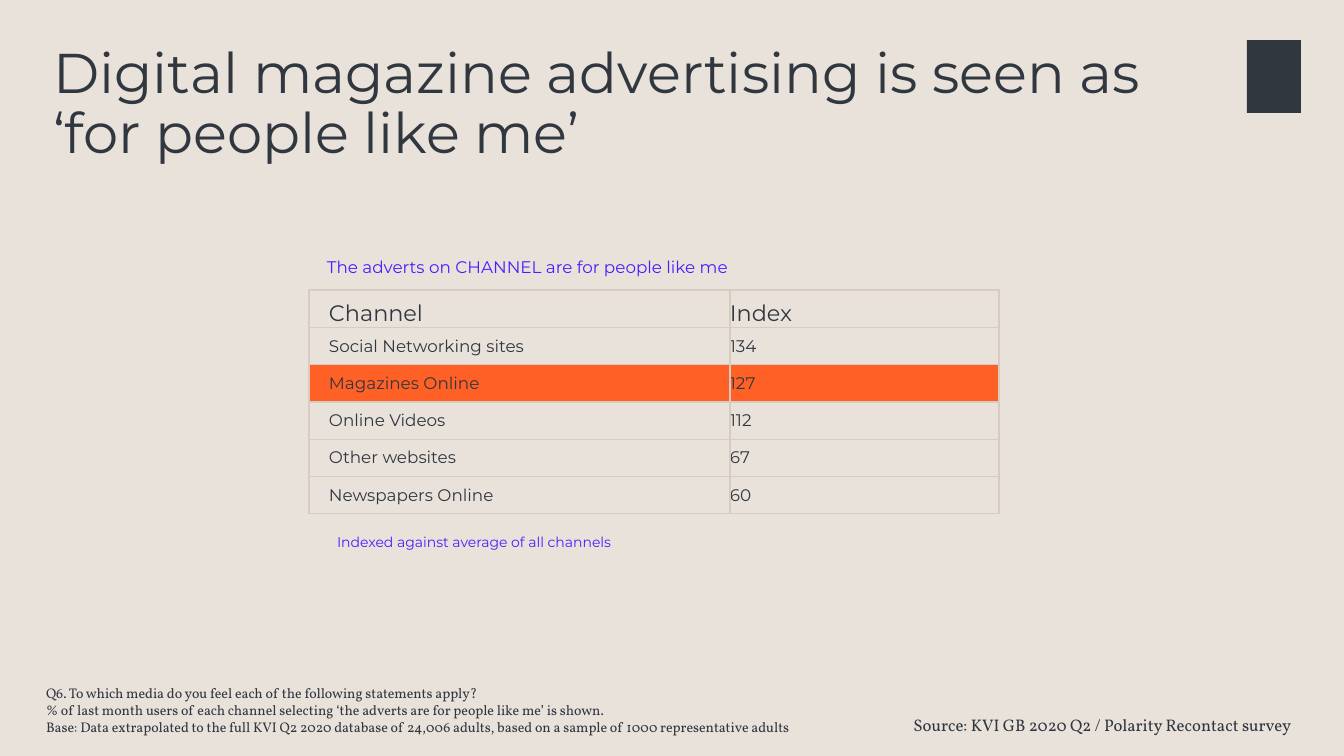
"""Build the slide on how digital magazine advertising is perceived."""
import pptx
import pptx.dml.color
import pptx.enum.shapes
import pptx.enum.text
import pptx.oxml
import pptx.oxml.ns
import pptx.util

RGBColor = pptx.dml.color.RGBColor
Anchor = pptx.enum.text.MSO_ANCHOR
Align = pptx.enum.text.PP_ALIGN
SAND = RGBColor(0xE9, 0xE2, 0xDB)
SLATE = RGBColor(0x30, 0x37, 0x3F)
ORANGE = RGBColor(0xFF, 0x60, 0x25)
VIOLET = RGBColor(0x49, 0x1D, 0xFF)
RULE = RGBColor(0xD8, 0xCB, 0xBF)
SANS, SERIF = "Montserrat", "Vollkorn"
PX = 914400 / 100.8


def px(length):
    return pptx.util.Emu(round(length * PX))


def write(frame, lines, size, font, color, anchor, insets, align=Align.LEFT, spacing=1.0, before=0):
    frame.vertical_anchor = anchor
    frame.margin_left, frame.margin_top, frame.margin_right, frame.margin_bottom = map(px, insets)
    for number, line in enumerate(lines):
        paragraph = frame.add_paragraph() if number else frame.paragraphs[0]
        paragraph.alignment = align
        paragraph.line_spacing = spacing
        paragraph.space_before = pptx.util.Pt(before)
        run = paragraph.add_run()
        run.text = line
        run.font.size = pptx.util.Pt(size)
        run.font.name = font
        run.font.color.rgb = color


deck = pptx.Presentation()
deck.slide_width, deck.slide_height = px(1344), px(756)
slide = deck.slides.add_slide(deck.slide_layouts[6])
slide.background.fill.solid()
slide.background.fill.fore_color.rgb = SAND

emblem = slide.shapes.add_shape(
    pptx.enum.shapes.MSO_SHAPE.RECTANGLE, px(1247), px(40), px(54), px(73))
emblem.shadow.inherit = False
emblem.fill.solid()
emblem.fill.fore_color.rgb = SLATE
emblem.line.fill.background()

title = slide.shapes.add_textbox(px(43), px(40), px(1121), px(146)).text_frame
title.word_wrap = True
write(title, ["Digital magazine advertising is seen as ‘for people like me’"],
      40, SANS, SLATE, Anchor.TOP, (10, 5, 10, 5), spacing=0.9)

source = slide.shapes.add_textbox(px(851), px(706), px(451), px(41)).text_frame
source.word_wrap = True
write(source, ["Source: KVI GB 2020 Q2 / Polarity Recontact survey"],
      12, SERIF, SLATE, Anchor.MIDDLE, (10, 5, 10, 5), Align.RIGHT, 0.9, 10)

channel_scores = [
    ("Channel", "Index"),
    ("Social Networking sites", "134"),
    ("Magazines Online", "127"),
    ("Online Videos", "112"),
    ("Other websites", "67"),
    ("Newspapers Online", "60"),
]
scores = slide.shapes.add_table(
    len(channel_scores), 2, px(309), px(290), px(690), px(224)).table
scores.first_row = False
scores.horz_banding = False
scores.columns[0].width, scores.columns[1].width = px(421), px(269)
for row, entry in enumerate(channel_scores):
    scores.rows[row].height = px(224 / len(channel_scores))
    for column, text in enumerate(entry):
        cell = scores.cell(row, column)
        if entry[0] == "Magazines Online":
            cell.fill.solid()
            cell.fill.fore_color.rgb = ORANGE
        else:
            cell.fill.background()
        write(cell.text_frame, [text], 12 if row else 16, SANS, SLATE, Anchor.MIDDLE, (0, 0, 0, 0))
        cell.vertical_anchor = Anchor.MIDDLE if row else Anchor.BOTTOM
        cell.margin_left = px(0 if column else 20)
        cell.margin_top = cell.margin_right = cell.margin_bottom = 0
        properties = cell._tc.get_or_add_tcPr()
        for order, side in enumerate("LRTB"):
            properties.insert(order, pptx.oxml.parse_xml(
                f'<a:ln{side} {pptx.oxml.ns.nsdecls("a")} w="12700"><a:solidFill>'
                f'<a:srgbClr val="{RULE}"/></a:solidFill></a:ln{side}>'))

footnote = slide.shapes.add_textbox(px(43), px(651), px(807), px(87)).text_frame
footnote.word_wrap = True
write(footnote, [
    "Q6. To which media do you feel each of the following statements apply?",
    "% of last month users of each channel selecting ‘the adverts are for people like me’ is shown.",
    "Base: Data extrapolated to the full KVI Q2 2020 database of 24,006 adults, "
    "based on a sample of 1000 representative adults",
], 10, SERIF, SLATE, Anchor.BOTTOM, (3, 3, 3, 3))

index_note = slide.shapes.add_textbox(px(327), px(531), px(294), px(22)).text_frame
index_note.word_wrap = False
write(index_note, ["Indexed against average of all channels"],
      10, SANS, VIOLET, Anchor.MIDDLE, (3, 3, 3, 3), Align.CENTER)

statement = slide.shapes.add_textbox(px(327), px(257), px(454), px(20)).text_frame
statement.word_wrap = True
write(statement, ["The adverts on CHANNEL are for people like me"],
      12, SANS, VIOLET, Anchor.TOP, (0, 0, 0, 0))

deck.save("out.pptx")
